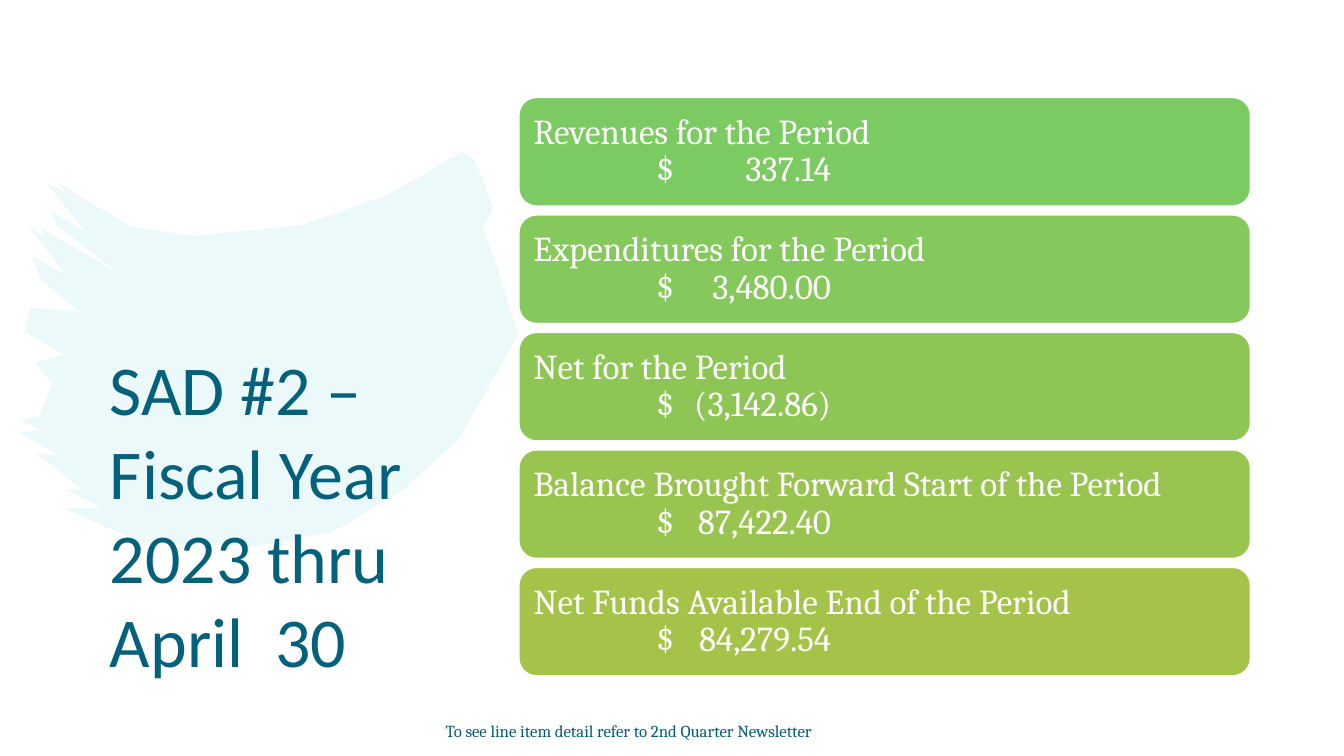
from dataclasses import dataclass
from lxml.etree import SubElement
from pptx import Presentation
from pptx.dml.color import RGBColor
from pptx.enum.shapes import MSO_SHAPE
from pptx.enum.text import MSO_ANCHOR, PP_ALIGN
from pptx.oxml.ns import qn
from pptx.util import Cm, Pt


@dataclass(frozen=True)
class Theme:
    white: str = "FFFFFF"
    brush: str = "DBF5F9"
    title: str = "04617B"
    note: str = "045D75"
    bars: tuple = ("7CCA62", "85C85C", "8EC656", "99C44F", "A5C249")
    head: str = "Calibri"
    body: str = "Cambria"
    big: int = 50
    mid: int = 25
    small: int = 12


THEME = Theme()

ROWS = [
    ("Revenues for the Period", "337.14"),
    ("Expenditures for the Period", "3,480.00"),
    ("Net for the Period", "(3,142.86)"),
    ("Balance Brought Forward Start of the Period", "87,422.40"),
    ("Net Funds Available End of the Period", "84,279.54"),
]

# Brush edge, in hundredths of an inch, clockwise from the top right tip
UNIT = Cm(0.0254)
BRUSH = [
    (458, 150), (471, 158), (489, 206), (479, 225), (494, 268), (514, 332),
    (476, 399), (456, 435), (400, 486), (330, 528), (249, 542), (139, 538),
    (66, 505), (100, 503), (66, 486), (80, 485), (36, 449), (60, 453),
    (19, 429), (41, 427), (20, 417), (39, 413), (52, 381), (35, 360),
    (63, 352), (25, 329), (30, 305), (78, 309), (40, 277), (32, 254),
    (67, 274), (28, 225), (45, 235), (40, 226), (117, 271), (56, 223),
    (51, 210), (85, 230), (46, 182), (67, 192), (58, 182), (130, 225),
    (192, 234), (300, 223), (380, 195), (423, 172),
]


def paint(shape, fill):
    shape.shadow.inherit = False
    shape.fill.solid()
    shape.fill.fore_color.rgb = RGBColor.from_string(fill)


def pad(frame, anchor, inset):
    frame.word_wrap = True
    frame.vertical_anchor = anchor
    frame.margin_left = frame.margin_right = inset
    frame.margin_top = frame.margin_bottom = inset


def write(para, text, font, size, color):
    run = para.add_run()
    run.text = text
    run.font.name = font
    run.font.size = Pt(size)
    run.font.color.rgb = RGBColor.from_string(color)


def set_tabs(para, stops):
    tabs = SubElement(para._p.get_or_add_pPr(), qn("a:tabLst"))
    for pos, side in stops:
        SubElement(tabs, qn("a:tab"), pos=str(int(pos)), algn=side)


def add_brush(slide):
    pen = slide.shapes.build_freeform(*BRUSH[0], scale=UNIT)
    pen.add_line_segments(BRUSH[1:], close=True)
    shape = pen.convert_to_shape()
    paint(shape, THEME.brush)
    shape.line.fill.background()
    tint = shape.fill._xPr.find(qn("a:solidFill"))[0]
    SubElement(tint, qn("a:alpha"), val="50000")


def add_label(slide, box, text, font, size, color):
    frame = slide.shapes.add_textbox(*map(Cm, box)).text_frame
    pad(frame, MSO_ANCHOR.BOTTOM, 0)
    write(frame.paragraphs[0], text, font, size, color)


def add_bar(slide, top, fill, name, amount):
    bar = slide.shapes.add_shape(
        MSO_SHAPE.ROUNDED_RECTANGLE, Cm(13.06), top, Cm(18.47), Cm(2.77))
    paint(bar, fill)
    bar.line.color.rgb = RGBColor.from_string(THEME.white)
    bar.line.width = Pt(2)
    pad(bar.text_frame, MSO_ANCHOR.MIDDLE, Cm(0.25))
    para = bar.text_frame.paragraphs[0]
    set_tabs(para, [(Cm(3.1), "l"), (Cm(7.5), "r")])
    para.alignment = PP_ALIGN.LEFT
    para.line_spacing = 0.9
    style = (THEME.body, THEME.mid, THEME.white)
    write(para, name, *style)
    para.add_line_break()
    write(para, f"\t$\t{amount}", *style)


def main():
    deck = Presentation()
    deck.slide_width, deck.slide_height = Cm(33.87), Cm(19.05)
    slide = deck.slides.add_slide(deck.slide_layouts[6])

    # Title over the brush stroke
    add_brush(slide)
    add_label(slide, (2.77, 1.9, 9.7, 15.27),
              "SAD #2 – Fiscal Year 2023 thru April  30",
              THEME.head, THEME.big, THEME.title)

    # Note at the foot
    add_label(slide, (11.23, 17.65, 11.43, 1.02),
              "To see line item detail refer to 2nd Quarter Newsletter",
              THEME.body, THEME.small, THEME.note)

    # Stack of fund bars
    for i, (fill, row) in enumerate(zip(THEME.bars, ROWS)):
        add_bar(slide, Cm(2.44 + 2.96 * i), fill, *row)

    deck.save("out.pptx")


if __name__ == "__main__":
    main()
